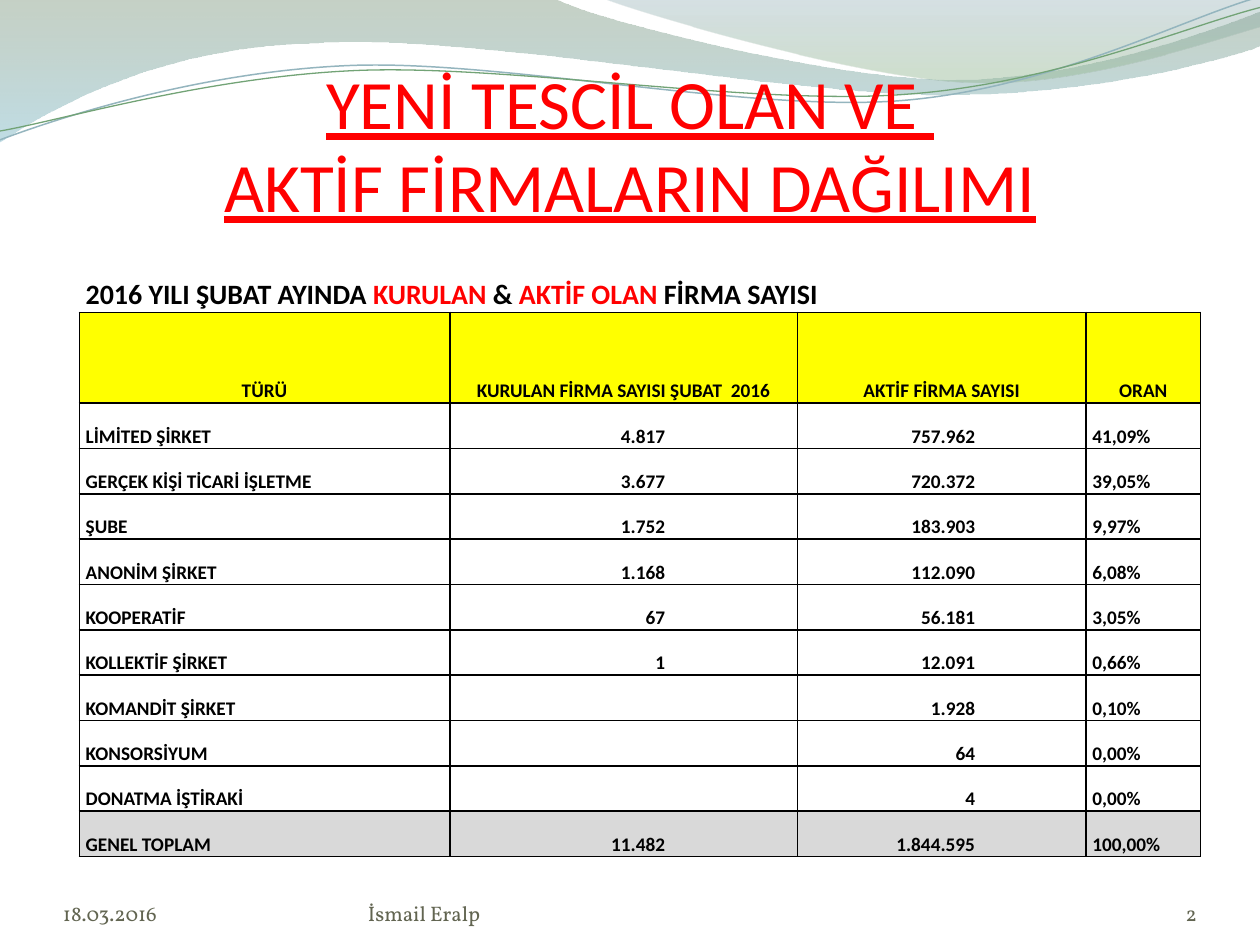
import math

import lxml.etree
import pptx
import pptx.dml.color
import pptx.enum.text
import pptx.oxml
import pptx.oxml.ns
import pptx.util

Inches = pptx.util.Inches
Pt = pptx.util.Pt
ALIGN = pptx.enum.text.PP_ALIGN
BOTTOM = pptx.enum.text.MSO_ANCHOR.BOTTOM
qn = pptx.oxml.ns.qn

BLACK, RED, YELLOW, GREY = "000000", "FF0000", "FFFF00", "D9D9D9"
STRAND_TILT = -2.7

COLUMN_WIDTHS = [2.94, 2.76, 2.29, 0.91]
ROW_HEIGHTS = [0.52, 0.72] + [0.36] * 10
CAPTION = [("2016 YILI ŞUBAT AYINDA", BLACK), (" KURULAN", RED), (" & ", BLACK),
           ("AKTİF OLAN", RED), (" FİRMA SAYISI", BLACK)]
HEADINGS = ["TÜRÜ", "KURULAN FİRMA SAYISI ŞUBAT  2016", "AKTİF FİRMA SAYISI", "ORAN"]
COMPANIES = [
    ("LİMİTED ŞİRKET", "4.817", "757.962", "41,09%"),
    ("GERÇEK KİŞİ TİCARİ İŞLETME", "3.677", "720.372", "39,05%"),
    ("ŞUBE", "1.752", "183.903", "9,97%"),
    ("ANONİM ŞİRKET", "1.168", "112.090", "6,08%"),
    ("KOOPERATİF", "67", "56.181", "3,05%"),
    ("KOLLEKTİF ŞİRKET", "1", "12.091", "0,66%"),
    ("KOMANDİT ŞİRKET", "", "1.928", "0,10%"),
    ("KONSORSİYUM", "", "64", "0,00%"),
    ("DONATMA İŞTİRAKİ", "", "4", "0,00%"),
]
TOTAL = ("GENEL TOPLAM", "11.482", "1.844.595", "100,00%")
# Alignment and right margin of each column below the headings
COLUMN_FORMATS = [(ALIGN.LEFT, 0.05), (ALIGN.RIGHT, 1.05),
                  (ALIGN.RIGHT, 0.88), (ALIGN.LEFT, 0.05)]


def color(hex_code):
    return pptx.dml.color.RGBColor.from_string(hex_code)


def style_font(font, name, size, hex_code, bold=False):
    font.name = name
    font.size = Pt(size)
    font.bold = bold
    font.color.rgb = color(hex_code)


def set_margins(box, left, top, right, bottom):
    box.margin_left, box.margin_top = Inches(left), Inches(top)
    box.margin_right, box.margin_bottom = Inches(right), Inches(bottom)


def add_outline(slide, start, segments, close):
    """Freeform of segments with one end point (line) or three points (cubic curve)."""
    points = [start] + [point for segment in segments for point in segment]
    points = [(Inches(x), Inches(y)) for x, y in points]
    builder = slide.shapes.build_freeform(*points[0], scale=1.0)
    builder.add_line_segments(points[1:], close=close)
    outline = builder.convert_to_shape()
    outline.shadow.inherit = False
    lines = iter(list(outline._element.iter(qn("a:lnTo"))))
    for segment in segments:
        first, *others = [next(lines) for _ in segment]
        if others:
            first.tag = qn("a:cubicBezTo")
            for line in others:
                first.append(line[0])
                line.getparent().remove(line)
    return outline


def add_wave(slide, start, segments, stops):
    """Closed band with a vertical gradient; stops are (position, colour, opacity %)."""
    wave = add_outline(slide, start, segments, True)
    wave.line.fill.background()
    wave.fill.gradient()
    wave.fill.gradient_angle = 270
    for stop, (position, hex_code, _) in zip(wave.fill.gradient_stops, stops):
        stop.position = position
        stop.color.rgb = color(hex_code)
    for rgb, (_, _, opacity) in zip(wave._element.spPr.iter(qn("a:srgbClr")), stops):
        lxml.etree.SubElement(rgb, qn("a:alpha")).set("val", str(opacity * 1000))


def level(point, center):
    """Turn a point of a tilted strand back to where it lies before the tilt."""
    angle = math.radians(-STRAND_TILT)
    dx, dy = point[0] - center[0], point[1] - center[1]
    return (center[0] + dx * math.cos(angle) - dy * math.sin(angle),
            center[1] + dx * math.sin(angle) + dy * math.cos(angle))


def add_strand(slide, center, start, segments, hex_code, width):
    curves = [[level(point, center) for point in segment] for segment in segments]
    strand = add_outline(slide, level(start, center), curves, False)
    strand.rotation = STRAND_TILT
    strand.fill.background()
    strand.line.color.rgb = color(hex_code)
    strand.line.width = Pt(width)


def add_waves(slide):
    add_wave(slide, (0, 0), [
        [(4.4, -0.01)],
        [(4.76, 0.17), (6.64, 0.63), (7.58, 0.63)],
        [(8.53, 0.63), (9.58, 0.26), (10, 0.09)],
        [(10.01, 0.36)],
        [(9.83, 0.44), (8.7, 0.76), (7.46, 0.75)],
        [(6.22, 0.75), (3.82, 0.28), (2.57, 0.34)],
        [(1.29, 0.36), (0.46, 0.83), (-0.01, 1.13)],
    ], [(0, "809980", 45), (1, "8DC1CF", 55)])
    add_wave(slide, (4.79, -0.01), [
        [(5.09, 0.11), (6.82, 0.62), (7.69, 0.65)],
        [(8.56, 0.69), (9.61, 0.32), (10, 0.21)],
        [(10, 0)],
    ], [(0, "779BA4", 30), (0.8, "96B996", 45)])
    add_strand(slide, (4.99, 0.58), (0, 1.11), [
        [(0.48, 0.93), (1.58, 0.57), (2.77, 0.52)],
        [(3.95, 0.47), (5.93, 0.89), (7.13, 0.8)],
        [(8.33, 0.71), (9.38, 0.15), (9.98, -0.02)],
    ], "94B5BE", 0.85)
    add_strand(slide, (5, 0.59), (0, 1.04), [
        [(0.47, 0.96), (1.64, 0.61), (2.83, 0.56)],
        [(4.03, 0.51), (5.97, 0.84), (7.17, 0.75)],
        [(8.36, 0.67), (9.41, 0.21), (10, 0.06)],
    ], "72A376", 0.75)


def place_title(slide):
    title = slide.shapes.title
    title.left, title.top = Inches(0), Inches(0.52)
    title.width, title.height = Inches(10), Inches(1.28)
    frame = title.text_frame
    frame.text = "YENİ TESCİL OLAN VE \vAKTİF FİRMALARIN DAĞILIMI"
    frame.auto_size = pptx.enum.text.MSO_AUTO_SIZE.NONE
    frame.vertical_anchor = BOTTOM
    set_margins(frame, 0, 0.05, 0, 0)
    heading = frame.paragraphs[0]
    heading.alignment = ALIGN.CENTER
    style_font(heading.font, "Calibri", 39.6, RED)
    heading.font.underline = True
    slide.shapes._spTree.append(title._element)  # in front of the waves


def set_borders(cell, drawn):
    """Black 1 pt lines on the sides named in drawn, none on the others."""
    properties = cell._tc.get_or_add_tcPr()
    for index, side in enumerate("LRTB"):
        border = pptx.oxml.parse_xml(
            f'<a:ln{side} {pptx.oxml.ns.nsdecls("a")} w="12700"/>')
        if side in drawn:
            fill = lxml.etree.SubElement(border, qn("a:solidFill"))
            lxml.etree.SubElement(fill, qn("a:srgbClr")).set("val", BLACK)
        else:
            lxml.etree.SubElement(border, qn("a:noFill"))
        properties.insert(index, border)


def fill_cell(cell, text, alignment, right_margin=0.05, background=None, size=11,
              borders="LRTB"):
    cell.text = text
    cell.vertical_anchor = BOTTOM
    set_margins(cell, 0.05, 0, right_margin, 0)
    content = cell.text_frame.paragraphs[0]
    content.alignment = alignment
    content.line_spacing = 1.15
    style_font(content.font, "Calibri", size, BLACK, bold=True)
    if background:
        cell.fill.solid()
        cell.fill.fore_color.rgb = color(background)
    else:
        cell.fill.background()
    set_borders(cell, borders)


def add_company_table(slide):
    table = slide.shapes.add_table(
        len(ROW_HEIGHTS), len(COLUMN_WIDTHS), Inches(0.63), Inches(1.96),
        Inches(sum(COLUMN_WIDTHS)), Inches(sum(ROW_HEIGHTS))).table
    table.first_row = table.horz_banding = False
    for column, width in zip(table.columns, COLUMN_WIDTHS):
        column.width = Inches(width)
    for row, height in zip(table.rows, ROW_HEIGHTS):
        row.height = Inches(height)

    for cell in table.rows[0].cells:
        fill_cell(cell, "", ALIGN.LEFT, size=16, borders="B")
    caption = table.cell(0, 0)
    caption.merge(table.cell(0, len(COLUMN_WIDTHS) - 1))
    for text, hex_code in CAPTION:
        part = caption.text_frame.paragraphs[0].add_run()
        part.text = text
        part.font.color.rgb = color(hex_code)

    for cell, heading in zip(table.rows[1].cells, HEADINGS):
        fill_cell(cell, heading, ALIGN.CENTER, background=YELLOW)
    for row_index, record in enumerate([*COMPANIES, TOTAL], start=2):
        background = GREY if record is TOTAL else None
        cells = table.rows[row_index].cells
        for cell, value, (alignment, margin) in zip(cells, record, COLUMN_FORMATS):
            fill_cell(cell, value, alignment, margin, background)


def add_footer(slide, text, left, width, alignment=ALIGN.LEFT):
    frame = slide.shapes.add_textbox(
        Inches(left), Inches(6.95), Inches(width), Inches(0.4)).text_frame
    frame.word_wrap = True
    frame.vertical_anchor = BOTTOM
    set_margins(frame, 0, 0, 0, 0)
    frame.text = text
    frame.paragraphs[0].alignment = alignment
    style_font(frame.paragraphs[0].font, "Vollkorn", 12, "626551")


def main():
    deck = pptx.Presentation()
    deck.slide_width, deck.slide_height = Inches(10), Inches(7.5)
    slide = deck.slides.add_slide(deck.slide_layouts[5])
    add_waves(slide)
    place_title(slide)
    add_company_table(slide)
    add_footer(slide, "2", 8.67, 0.83, ALIGN.RIGHT)
    add_footer(slide, "18.03.2016", 0.5, 2.33)
    add_footer(slide, "İsmail Eralp", 2.92, 3.67)
    deck.save("out.pptx")


if __name__ == "__main__":
    main()
